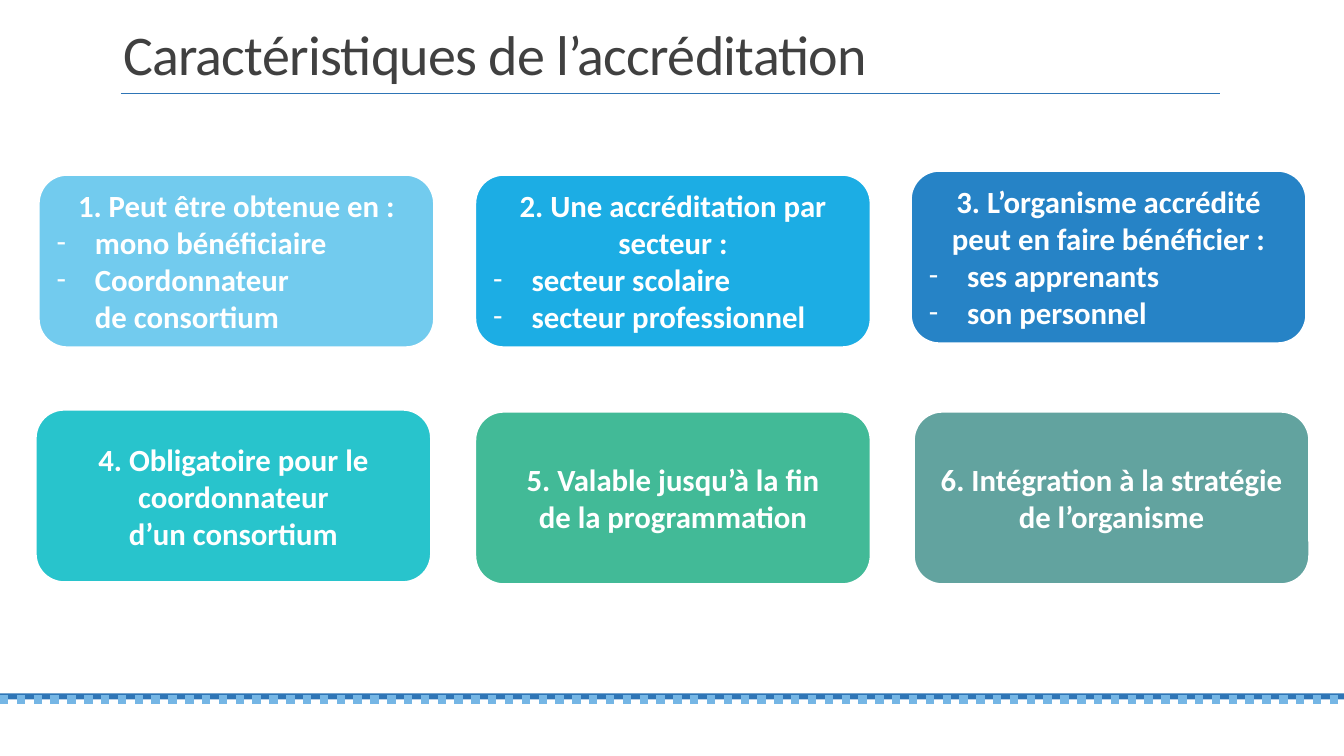
from lxml import etree
from pptx import Presentation
from pptx import util as u
from pptx.dml.color import RGBColor
from pptx.enum import dml, shapes, text
from pptx.oxml.ns import qn

WIDTH, HEIGHT = 13.33, 7.5
FONT = "Calibri"
WHITE = RGBColor(0xFF, 0xFF, 0xFF)
TITLE_GREY = RGBColor(0x40, 0x40, 0x40)
BAND_BLUE = RGBColor(0x2E, 0x75, 0xB6)
DOT_BLUE = RGBColor(0x75, 0xB6, 0xE5)

# Card grid: pitch from one card to the next, and card size
COLUMNS = 3
PITCH_X, PITCH_Y = 4.35, 2.35
CARD_W, CARD_H = 3.93, 1.72
INDENT = u.Inches(0.38)

# Each card: fill, offset from its grid cell, heading, dashed items
CARDS = [
    (RGBColor(0x72, 0xCB, 0xEE), (0.02, 0), "1. Peut être obtenue en :",
     ["mono bénéficiaire", "Coordonnateur\vde consortium"]),
    (RGBColor(0x1C, 0xAD, 0xE4), (0, 0), "2. Une accréditation par secteur :",
     ["secteur scolaire", "secteur professionnel"]),
    (RGBColor(0x26, 0x83, 0xC6), (-0.03, -0.04),
     "3. L’organisme accrédité peut en faire bénéficier :",
     ["ses apprenants", "son personnel"]),
    (RGBColor(0x28, 0xC4, 0xCC), (-0.01, -0.02),
     "4. Obligatoire pour le coordonnateur\vd’un consortium", []),
    (RGBColor(0x42, 0xBA, 0x97), (0, 0),
     "5. Valable jusqu’à la fin\vde la programmation", []),
    (RGBColor(0x62, 0xA3, 0x9F), (0, 0),
     "6. Intégration à la stratégie\vde l’organisme", []),
]


def inches(*lengths):
    return [u.Inches(length) for length in lengths]


def add_rule(slide, left, top, width, color, weight):
    rule = slide.shapes.add_connector(
        shapes.MSO_CONNECTOR.STRAIGHT, *inches(left, top, left + width, top))
    rule.line.color.rgb = color
    rule.line.width = u.Pt(weight)
    etree.SubElement(rule._element.spPr, qn("a:effectLst"))
    return rule


def add_title(slide, left, top, width, height):
    title = slide.shapes.title
    title.left, title.top, title.width, title.height = inches(left, top, width, height)
    frame = title.text_frame
    frame.text = "Caractéristiques de l’accréditation"
    frame.auto_size = text.MSO_AUTO_SIZE.NONE
    frame.vertical_anchor = text.MSO_ANCHOR.BOTTOM
    heading = frame.paragraphs[0]
    heading.alignment = text.PP_ALIGN.LEFT
    heading.line_spacing = 0.85
    run = heading.runs[0]
    run.font.name, run.font.size = FONT, u.Pt(40)
    run.font.color.rgb = TITLE_GREY
    run.font._element.set("spc", "-50")
    # Rule under the title
    add_rule(slide, left + 0.08, top + height + 0.02, 10.9, BAND_BLUE, 1)


def add_footer_band(slide, left, top, width, height):
    band = slide.shapes.add_shape(
        shapes.MSO_SHAPE.RECTANGLE, *inches(left, top, width, height))
    band.shadow.inherit = False
    band.fill.solid()
    band.fill.fore_color.rgb = BAND_BLUE
    band.line.fill.background()
    dots = add_rule(slide, left, top + height, width, DOT_BLUE, 6)
    dots.line.dash_style = dml.MSO_LINE.ROUND_DOT


def add_dash(paragraph):
    properties = paragraph._p.get_or_add_pPr()
    properties.set("marL", str(INDENT))
    properties.set("indent", str(-INDENT))
    etree.SubElement(properties, qn("a:buFont")).set("typeface", FONT)
    etree.SubElement(properties, qn("a:buChar")).set("char", "-")


def add_card(slide, left, top, fill, heading, items):
    card = slide.shapes.add_shape(
        shapes.MSO_SHAPE.ROUNDED_RECTANGLE, *inches(left, top, CARD_W, CARD_H))
    card.shadow.inherit = False
    card.fill.solid()
    card.fill.fore_color.rgb = fill
    card.line.color.rgb = WHITE
    card.line.width = u.Pt(2)
    frame = card.text_frame
    frame.word_wrap = True
    frame.vertical_anchor = text.MSO_ANCHOR.MIDDLE
    for number, line in enumerate([heading] + items):
        paragraph = frame.add_paragraph() if number else frame.paragraphs[0]
        paragraph.text = line
        if number:
            paragraph.alignment = text.PP_ALIGN.LEFT
            add_dash(paragraph)
        else:
            paragraph.alignment = text.PP_ALIGN.CENTER
        for run in paragraph.runs:
            run.font.name, run.font.size, run.font.bold = FONT, u.Pt(22), True
            run.font.color.rgb = WHITE


def add_card_grid(slide, left, top):
    for index, (fill, (shift_x, shift_y), heading, items) in enumerate(CARDS):
        row, column = divmod(index, COLUMNS)
        add_card(slide, left + column * PITCH_X + shift_x,
                 top + row * PITCH_Y + shift_y, fill, heading, items)


def main():
    deck = Presentation()
    deck.slide_width, deck.slide_height = inches(WIDTH, HEIGHT)
    slide = deck.slides.add_slide(deck.slide_layouts[5])
    add_footer_band(slide, 0, 6.88, WIDTH, 0.06)
    add_title(slide, 1.12, 0, 11.84, 0.91)
    add_card_grid(slide, 0.36, 1.73)
    deck.save("out.pptx")


if __name__ == "__main__":
    main()
